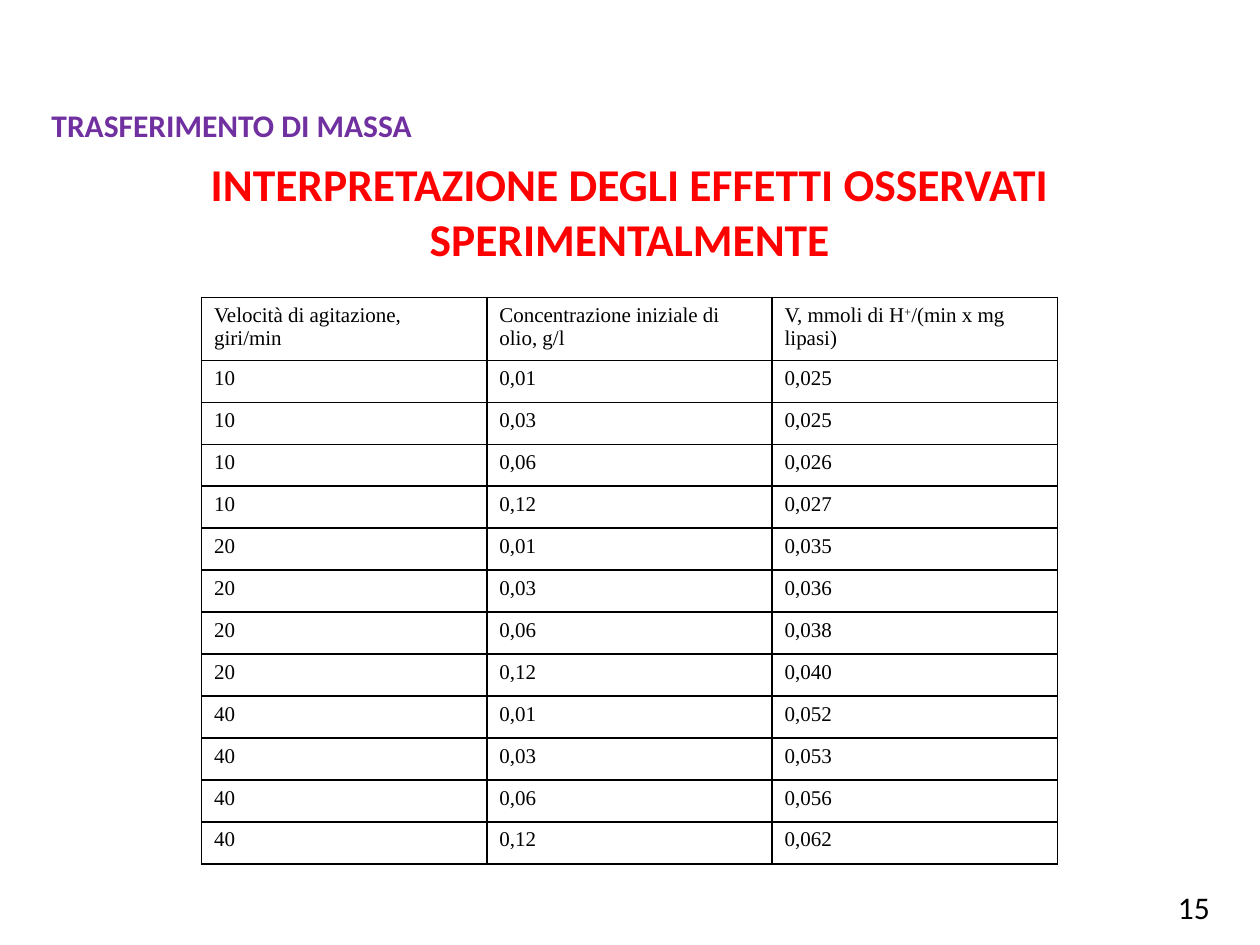
"""Build the slide on mass transfer with its table of measured rates."""
import dataclasses
import itertools
import typing

import lxml.etree
import pptx
import pptx.dml.color
import pptx.enum.text
import pptx.oxml.ns
import pptx.util

Pt = pptx.util.Pt
Align = pptx.enum.text.PP_ALIGN


@dataclasses.dataclass(frozen=True)
class Theme:
    black: str = "000000"
    red: str = "FF0000"
    purple: str = "7030A0"
    heading_font: str = "Calibri"
    table_font: str = "Times New Roman"
    title_size: float = 26
    label_size: float = 18
    table_size: float = 12
    border_width: float = 1


@dataclasses.dataclass(frozen=True)
class Label:
    text: str
    left: float
    top: float
    width: float
    height: float
    size: float
    color: str
    bold: bool = False
    wrap: bool = False
    align: Align = Align.LEFT


THEME = Theme()
LABELS = (
    Label("15", 666, 504, 38, 36, THEME.label_size, THEME.black),
    Label("INTERPRETAZIONE DEGLI EFFETTI OSSERVATI SPERIMENTALMENTE", 0, 85.7, 720, 70,
          THEME.title_size, THEME.red, bold=True, wrap=True, align=Align.CENTER),
    Label("TRASFERIMENTO DI MASSA", 22.3, 57, 222.5, 29, THEME.label_size,
          THEME.purple, bold=True),
)
HEADERS = (
    ("Velocità di agitazione, giri/min",),
    ("Concentrazione iniziale di olio, g/l",),
    ("V, mmoli di H", "+", "/(min x mg lipasi)"),
)
SPEEDS = ("10", "20", "40")
CONCENTRATIONS = ("0,01", "0,03", "0,06", "0,12")
RATES = ("0,025", "0,025", "0,026", "0,027", "0,035", "0,036",
         "0,038", "0,040", "0,052", "0,053", "0,056", "0,062")
TABLE_LEFT, TABLE_TOP = 115.2, 169.9
COLUMN_WIDTH, HEADER_HEIGHT, ROW_HEIGHT = 163, 36, 24


def add_text(p: typing.Any, text: str, *, font: str, size: float, color: str,
             bold: bool = False, superscript: bool = False) -> None:
    """Append a formatted run to a paragraph."""
    r = p.add_run()
    r.text = text
    r.font.name = font
    r.font.size = Pt(size)
    r.font.bold = bold
    r.font.color.rgb = pptx.dml.color.RGBColor.from_string(color)
    if superscript:
        r.font._element.set("baseline", "30000")


def add_label(s: typing.Any, label: Label) -> None:
    """Draw a one-paragraph text box."""
    sp = s.shapes.add_textbox(Pt(label.left), Pt(label.top), Pt(label.width), Pt(label.height))
    tf = sp.text_frame
    tf.word_wrap = label.wrap
    tf.auto_size = pptx.enum.text.MSO_AUTO_SIZE.SHAPE_TO_FIT_TEXT
    p = tf.paragraphs[0]
    p.alignment = label.align
    add_text(p, label.text, font=THEME.heading_font, size=label.size,
             color=label.color, bold=label.bold)


def set_borders(cell: typing.Any) -> None:
    """Give a cell a solid line on all four sides."""
    qn = pptx.oxml.ns.qn
    tcPr = cell._tc.get_or_add_tcPr()
    for i, side in enumerate(("a:lnL", "a:lnR", "a:lnT", "a:lnB")):
        ln = lxml.etree.Element(qn(side), w=str(Pt(THEME.border_width)))
        fill = lxml.etree.SubElement(ln, qn("a:solidFill"))
        lxml.etree.SubElement(fill, qn("a:srgbClr"), val=THEME.black)
        tcPr.insert(i, ln)


def add_rates_table(s: typing.Any) -> None:
    """Draw the table of rates for each speed and concentration."""
    pairs = itertools.product(SPEEDS, CONCENTRATIONS)
    rows = [HEADERS] + [((speed,), (conc,), (rate,))
                        for (speed, conc), rate in zip(pairs, RATES)]
    columns = len(HEADERS)
    height = HEADER_HEIGHT + ROW_HEIGHT * len(RATES)
    table = s.shapes.add_table(len(rows), columns, Pt(TABLE_LEFT), Pt(TABLE_TOP),
                               Pt(COLUMN_WIDTH * columns), Pt(height)).table
    table.first_row = False
    table.horz_banding = False
    for column in table.columns:
        column.width = Pt(COLUMN_WIDTH)
    for i, row in enumerate(rows):
        table.rows[i].height = Pt(ROW_HEIGHT if i else HEADER_HEIGHT)
        for j, parts in enumerate(row):
            cell = table.cell(i, j)
            cell.fill.background()
            set_borders(cell)
            for part in parts:
                add_text(cell.text_frame.paragraphs[0], part, font=THEME.table_font,
                         size=THEME.table_size, color=THEME.black, superscript=part == "+")


def main() -> None:
    """Create and save the presentation."""
    prs = pptx.Presentation()
    prs.slide_width, prs.slide_height = Pt(720), Pt(540)
    s = prs.slides.add_slide(prs.slide_layouts[6])
    add_rates_table(s)
    for label in LABELS:
        add_label(s, label)
    prs.save("out.pptx")


if __name__ == "__main__":
    main()
